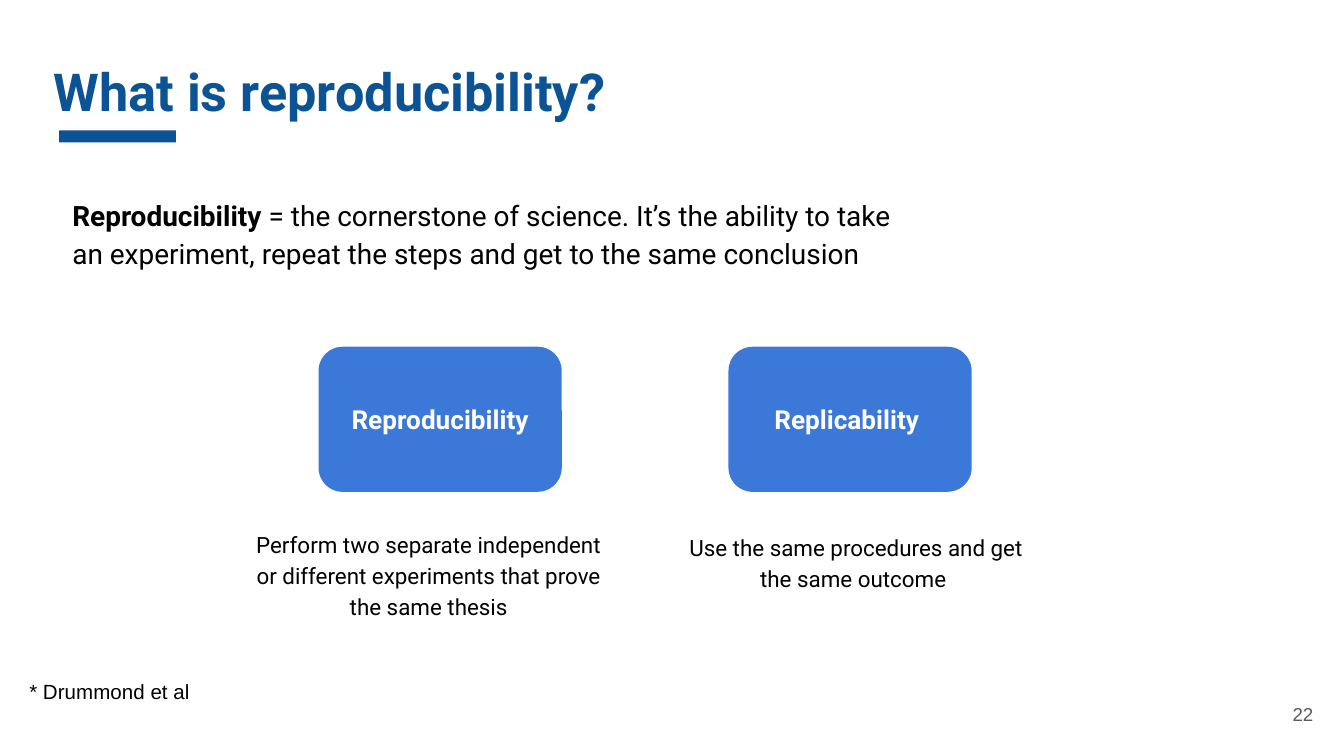
from dataclasses import dataclass

from pptx import Presentation
from pptx.dml.color import RGBColor
from pptx.enum.shapes import MSO_SHAPE
from pptx.enum.text import MSO_ANCHOR, PP_ALIGN
from pptx.util import Inches, Pt


@dataclass(frozen=True)
class Theme:
    navy: str = "0B5394"
    blue: str = "3C78D8"
    white: str = "FFFFFF"
    black: str = "000000"
    gray: str = "595959"
    head: str = "Roboto"
    plain: str = "Arial"
    title: int = 28
    lead: int = 15
    label: int = 14
    body: int = 12
    note: int = 11
    page: int = 10


@dataclass(frozen=True)
class Box:
    left: float
    top: float
    width: float
    height: float

    def lengths(self):
        return [Inches(v) for v in (self.left, self.top, self.width, self.height)]


@dataclass(frozen=True)
class Card:
    label: str
    text: str
    left: float
    note: Box


THEME = Theme()
CARDS = [
    Card(" Reproducibility ",
         "Perform two separate independent or different experiments "
         "that prove the same thesis",
         2.37, Box(1.74, 3.86, 2.9, 0.81)),
    Card("Replicability ",
         "Use the same procedures and get the same outcome ",
         5.42, Box(4.92, 3.77, 2.9, 0.81)),
]


def write(shape, text: str, *, size: int, color: str = THEME.black,
          font: str = THEME.head, bold: bool = False, lead: str = "",
          align=PP_ALIGN.LEFT, anchor=MSO_ANCHOR.MIDDLE, prose: bool = False):
    frame = shape.text_frame
    frame.word_wrap = True
    frame.vertical_anchor = anchor
    frame.margin_left = frame.margin_right = Inches(0.1)
    frame.margin_top = frame.margin_bottom = Inches(0.1)
    para = frame.paragraphs[0]
    para.alignment = align
    if prose:
        para.line_spacing = 1.15
        para.space_after = Pt(16)
    for part, heavy in ((lead, True), (text, bold)):
        if part:
            run = para.add_run()
            run.text = part
            run.font.name = font
            run.font.size = Pt(size)
            run.font.bold = heavy
            run.font.color.rgb = RGBColor.from_string(color)


def label(slide, box: Box, text: str, **style):
    write(slide.shapes.add_textbox(*box.lengths()), text, **style)


def block(slide, kind: MSO_SHAPE, box: Box, color: str):
    shape = slide.shapes.add_shape(kind, *box.lengths())
    shape.shadow.inherit = False
    shape.fill.solid()
    shape.fill.fore_color.rgb = RGBColor.from_string(color)
    shape.line.fill.background()
    return shape


def draw(slide, card: Card):
    tile = block(slide, MSO_SHAPE.ROUNDED_RECTANGLE,
                 Box(card.left, 2.58, 1.81, 1.08), THEME.blue)
    write(tile, card.label, size=THEME.label, color=THEME.white, bold=True,
          align=PP_ALIGN.CENTER)
    label(slide, card.note, card.text, size=THEME.body,
          align=PP_ALIGN.CENTER, prose=True)


def main():
    deck = Presentation()
    deck.slide_width = Inches(10)
    deck.slide_height = Inches(10 * 9 / 16)
    slide = deck.slides.add_slide(deck.slide_layouts[6])

    label(slide, Box(0.3, 0.34, 9.32, 0.63), "What is reproducibility?",
          size=THEME.title, color=THEME.navy, bold=True, anchor=MSO_ANCHOR.TOP)
    block(slide, MSO_SHAPE.RECTANGLE, Box(0.44, 0.97, 0.87, 0.09), THEME.navy)
    label(slide, Box(0.44, 1.32, 6.56, 0.81),
          " = the cornerstone of science. It’s the ability to take an "
          "experiment, repeat the steps and get to the same conclusion",
          lead="Reproducibility", size=THEME.lead, prose=True)
    for card in CARDS:
        draw(slide, card)
    label(slide, Box(0.12, 4.96, 5.7, 0.67), "* Drummond et al",
          size=THEME.note, font=THEME.plain, anchor=MSO_ANCHOR.TOP)
    label(slide, Box(9.27, 5.1, 0.6, 0.43), "22", size=THEME.page,
          color=THEME.gray, font=THEME.plain, align=PP_ALIGN.RIGHT)
    deck.save("out.pptx")


if __name__ == "__main__":
    main()
